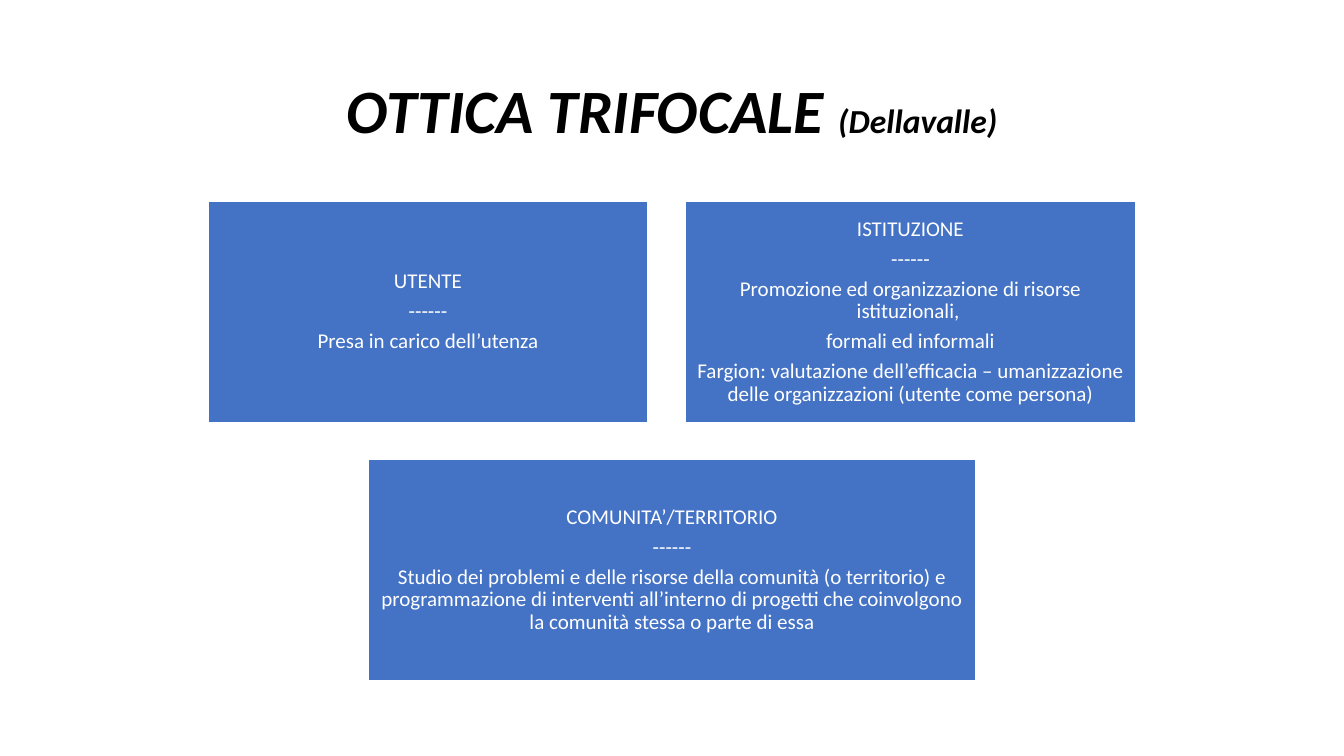
from pptx import Presentation
from pptx import util as u
from pptx.dml.color import RGBColor
from pptx.enum import shapes, text


def colour(value):
    return RGBColor.from_string(value)


class Board:
    """Holds the style and the current slide; lengths are percentages of the slide's size."""

    font = "Calibri"
    blue, white, black = "4472C4", "FFFFFF", "000000"
    body_size, title_size, author_size = 15, 44, 24
    column_gap = 2.78
    inset = u.Inches(0.06)

    def __init__(self, deck):
        self.deck = deck
        self.page = deck.slides.add_slide(deck.slide_layouts[6])

    def area(self, left, top, width, height):
        across, down = self.deck.slide_width / 100, self.deck.slide_height / 100
        return [round(n) for n in (left * across, top * down, width * across, height * down)]

    def style_frame(self, frame):
        frame.word_wrap = True
        frame.vertical_anchor = text.MSO_ANCHOR.MIDDLE
        for para in frame.paragraphs:
            para.alignment = text.PP_ALIGN.CENTER
            para.line_spacing = 0.9

    def style_span(self, span, size, ink):
        span.font.name = self.font
        span.font.size = u.Pt(size)
        span.font.color.rgb = colour(ink)

    def title(self, heading, author, top, width, height):
        box = self.page.shapes.add_textbox(*self.area((100 - width) / 2, top, width, height))
        para = box.text_frame.paragraphs[0]
        for words, size in ((heading, self.title_size), (author, self.author_size)):
            span = para.add_run()
            span.text = words
            self.style_span(span, size, self.black)
            span.font.bold = span.font.italic = True
        self.style_frame(box.text_frame)

    def card(self, lines, left, top, width, height):
        box = self.page.shapes.add_shape(
            shapes.MSO_SHAPE.RECTANGLE, *self.area(left, top, width, height))
        box.shadow.inherit = False
        box.fill.solid()
        box.fill.fore_color.rgb = colour(self.blue)
        box.line.color.rgb = colour(self.white)
        box.line.width = u.Pt(1)
        frame = box.text_frame
        frame.margin_left = frame.margin_right = self.inset
        frame.margin_top = frame.margin_bottom = self.inset
        frame.text = "\n".join(lines)
        self.style_frame(frame)
        for para in frame.paragraphs:
            para.space_after = u.Pt(0.35 * self.body_size)
            for span in para.runs:
                self.style_span(span, self.body_size, self.white)

    def card_row(self, cards, top, height):
        total = sum(width for width, _ in cards) + self.column_gap * (len(cards) - 1)
        left = (100 - total) / 2
        for width, lines in cards:
            self.card(lines, left, top, width, height)
            left += width + self.column_gap


DIVIDER = "------"
ROWS = [
    [
        (32.7, ["UTENTE", DIVIDER, "Presa in carico dell’utenza"]),
        (33.53, [
            "ISTITUZIONE", DIVIDER,
            "Promozione ed organizzazione di risorse istituzionali, ",
            "formali ed informali",
            "Fargion: valutazione dell’efficacia – umanizzazione delle "
            "organizzazioni (utente come persona)",
        ]),
    ],
    [
        (45.16, [
            "COMUNITA’/TERRITORIO", DIVIDER,
            "Studio dei problemi e delle risorse della comunità (o territorio) e "
            "programmazione di interventi all’interno di progetti che coinvolgono "
            "la comunità stessa o parte di essa",
        ]),
    ],
]


def main():
    deck = Presentation()
    deck.slide_width, deck.slide_height = u.Inches(13.33), u.Inches(7.5)
    board = Board(deck)
    board.title("OTTICA TRIFOCALE ", "(Dellavalle)", 5.33, 86.27, 19.33)
    first_top, row_height, row_gap = 26.67, 29.2, 4.93
    for index, cards in enumerate(ROWS):
        board.card_row(cards, first_top + index * (row_height + row_gap), row_height)
    deck.save("out.pptx")


if __name__ == "__main__":
    main()
